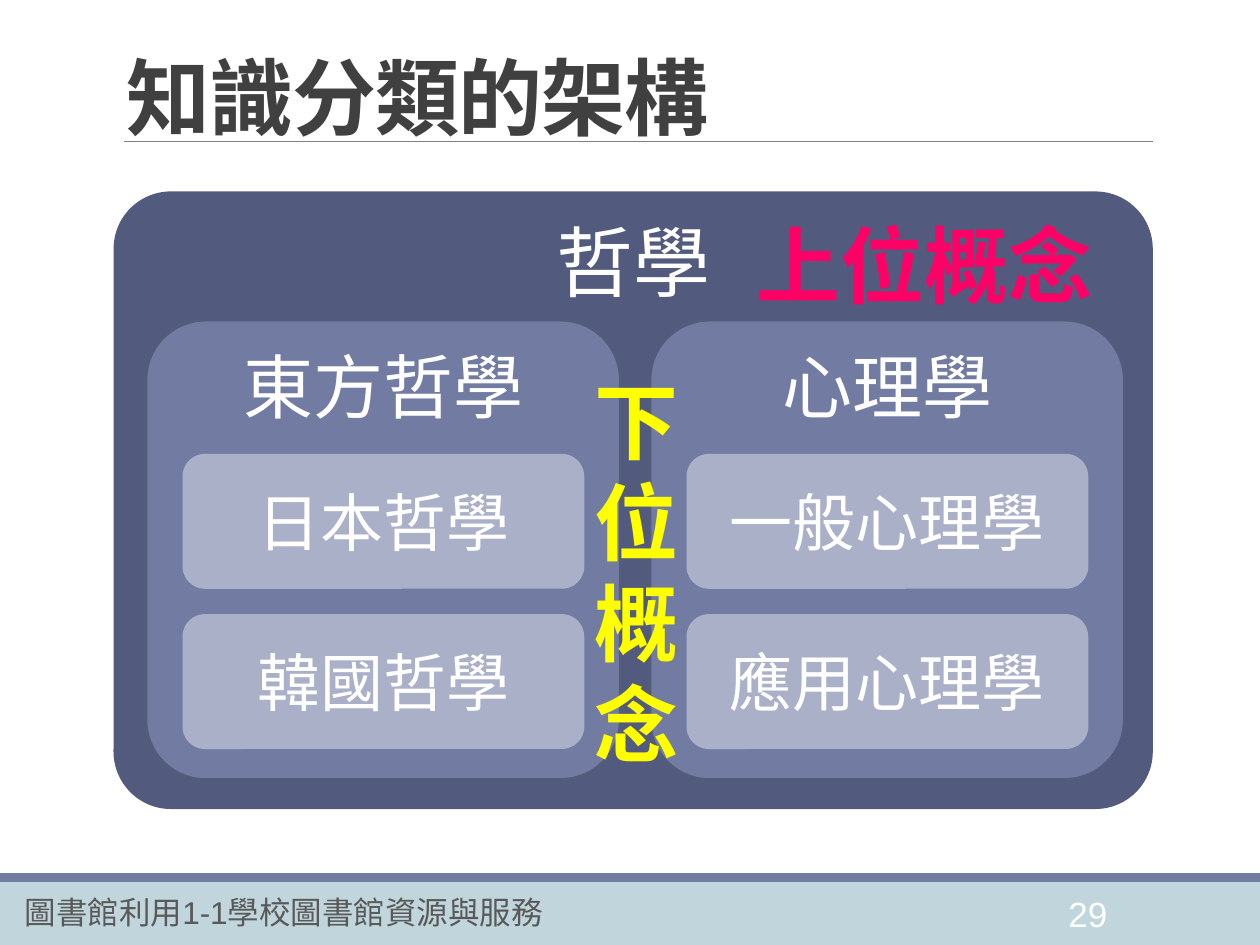
from lxml import etree
from pptx import Presentation
from pptx import util as u
from pptx.dml.color import RGBColor
from pptx.enum import shapes, text
from pptx.oxml.ns import qn

SANS, CJK = "Arial", "Noto Sans CJK SC"
WHITE = "FFFFFF"
TITLE = "知識分類的架構"
TOPIC = "哲學"
BRANCHES = [
    ("東方哲學", ["日本哲學", "韓國哲學"]),
    ("心理學", ["一般心理學", "應用心理學"]),
]


def color(value):
    return RGBColor.from_string(value)


def cm_box(box):
    return [u.Cm(length) for length in box]


def write(shape, words, size, hue, font=SANS, bold=False,
          align=text.PP_ALIGN.CENTER, anchor=text.MSO_ANCHOR.TOP):
    frame = shape.text_frame
    frame.text = words
    frame.word_wrap = True
    frame.vertical_anchor = anchor
    paragraph = frame.paragraphs[0]
    paragraph.alignment = align
    run = paragraph.runs[0]
    run.font.name = font
    run.font.size = u.Pt(size)
    run.font.bold = bold
    run.font.color.rgb = color(hue)
    if font == CJK:
        east_asian = etree.SubElement(run._r.get_or_add_rPr(), qn("a:ea"))
        east_asian.set("typeface", CJK)
    return paragraph


def add_block(slide, box, fill, kind=shapes.MSO_SHAPE.ROUNDED_RECTANGLE,
              rounding=None, line=None):
    shape = slide.shapes.add_shape(kind, *cm_box(box))
    shape.shadow.inherit = False
    shape.fill.solid()
    shape.fill.fore_color.rgb = color(fill)
    if line:
        shape.line.color.rgb = color(line)
        shape.line.width = u.Pt(1.25)
    else:
        shape.line.fill.background()
    if rounding is not None:
        shape.adjustments[0] = rounding
    return shape


def add_label(slide, box, words, size, hue):
    label = slide.shapes.add_textbox(*cm_box(box))
    write(label, words, size, hue, align=text.PP_ALIGN.LEFT)


def add_caption(slide, box, words, hue):
    """Bold label laid over the diagram; a narrow box stacks its characters."""
    caption = slide.shapes.add_textbox(*cm_box(box))
    paragraph = write(caption, words, 48, hue, CJK, bold=True)
    paragraph.line_spacing = u.Pt(57.6)
    caption.text_frame.margin_top = u.Cm(0.3)


def add_footer(slide, box):
    left, top, width, height = box
    rectangle = shapes.MSO_SHAPE.RECTANGLE
    stripe = 0.18
    add_block(slide, (left, top + stripe, width, height - stripe), "C0D6DC", rectangle)
    add_block(slide, (left, top, width, stripe), "727CA3", rectangle)
    add_label(slide, (left + 21.29, top + 0.26, 1.78, 1.02), "29", 20, WHITE)
    add_label(slide, (left + 0.25, top + 0.28, 11.81, 1.02),
              "圖書館利用1-1學校圖書館資源與服務", 18, "595959")


def add_title(slide, box):
    left, top, width, height = box
    title = slide.shapes.title
    title.left, title.top, title.width, title.height = cm_box(box)
    paragraph = write(title, TITLE, 48, "404040", CJK, bold=True,
                      align=text.PP_ALIGN.LEFT, anchor=text.MSO_ANCHOR.BOTTOM)
    paragraph.line_spacing = 0.85
    paragraph.runs[0]._r.get_or_add_rPr().set("spc", "-50")

    rule_top = u.Cm(top + 1.83)
    rule = slide.shapes.add_connector(
        shapes.MSO_CONNECTOR.STRAIGHT,
        u.Cm(left + 0.2), rule_top, u.Cm(left + width), rule_top)
    rule.line.color.rgb = color("808080")
    rule.line.width = u.Pt(0.5)
    etree.SubElement(rule._element.spPr, qn("a:effectLst"))


def add_branch(slide, box, heading, topics):
    left, top, width, height = box
    panel = add_block(slide, box, "727CA3", rounding=0.129, line="545C79")
    write(panel, heading, 40, WHITE)
    for row, topic in enumerate(topics):
        item = add_block(slide, (left + 0.73, top + 2.69 + row * 3.23, 8.1, 2.72), "AAB0C8")
        write(item, topic, 36, WHITE, anchor=text.MSO_ANCHOR.MIDDLE)


def add_diagram(slide, box):
    left, top, width, height = box
    frame = add_block(slide, box, "525B7E", rounding=0.093)
    write(frame, TOPIC, 44, WHITE)
    for column, (heading, topics) in enumerate(BRANCHES):
        branch_box = (left + 0.66 + column * 10.16, top + 2.6, 9.55, 9.25)
        add_branch(slide, branch_box, heading, topics)
    add_caption(slide, (left + 11.83, top + 0.15, 9.02, 2.34), "上位概念", "FF0066")
    add_caption(slide, (left + 9.07, top + 3.3, 2.95, 8.41), "下位概念", "FFFF00")


def main():
    presentation = Presentation()
    presentation.slide_width = u.Cm(25.4)
    presentation.slide_height = u.Cm(19.05)
    slide = presentation.slides.add_slide(presentation.slide_layouts[5])
    add_footer(slide, (0, 17.6, 25.4, 1.45))
    add_title(slide, (2.29, 1.02, 20.95, 2.06))
    add_diagram(slide, (2.29, 3.86, 20.95, 12.45))
    presentation.save("out.pptx")


if __name__ == "__main__":
    main()
